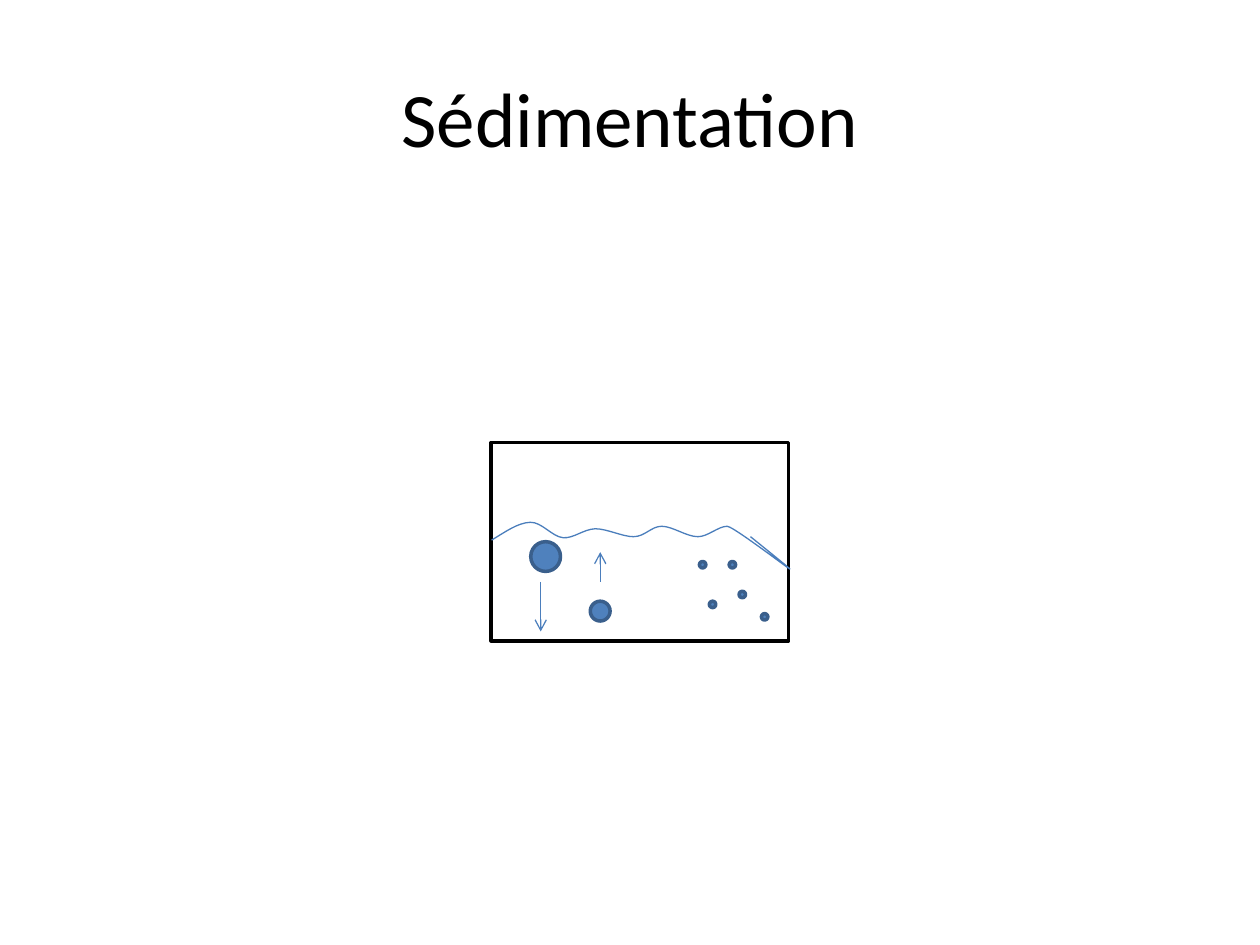
from dataclasses import dataclass

from lxml import etree
from pptx import Presentation
from pptx.dml.color import RGBColor
from pptx.enum.shapes import MSO_CONNECTOR, MSO_SHAPE
from pptx.enum.text import MSO_ANCHOR, PP_ALIGN
from pptx.oxml.ns import qn
from pptx.util import Cm, Pt

RECTANGLE = MSO_SHAPE.RECTANGLE
OVAL = MSO_SHAPE.OVAL
GRAIN = MSO_SHAPE.FLOWCHART_CONNECTOR
STRAIGHT = MSO_CONNECTOR.STRAIGHT
MIDDLE = MSO_ANCHOR.MIDDLE
CENTER = PP_ALIGN.CENTER


@dataclass(frozen=True)
class Theme:
    font: str = "Calibri"
    title_size: float = 44
    outline: float = 2
    thin: float = 0.75
    ink: RGBColor = RGBColor(0, 0, 0)
    paper: RGBColor = RGBColor(255, 255, 255)
    particle: RGBColor = RGBColor.from_string("4F81BD")
    particle_edge: RGBColor = RGBColor.from_string("3A5F8C")
    stroke: RGBColor = RGBColor.from_string("4B7EBC")


@dataclass(frozen=True)
class Particle:
    left: float
    top: float
    diameter: float = 0.13
    kind: MSO_SHAPE = GRAIN


@dataclass(frozen=True)
class Arrow:
    x: float
    start: float
    end: float


THEME = Theme()
PARTICLES = [
    Particle(10.7, 10.92, 0.6, OVAL),
    Particle(14.1, 11.32),
    Particle(14.7, 11.32),
    Particle(15.35, 12.37),
    Particle(14.3, 12.12),
    Particle(14.9, 11.92),
    Particle(11.9, 12.12, 0.4, OVAL),
]
ARROWS = [Arrow(10.9, 11.73, 12.73), Arrow(12.1, 11.73, 11.13)]
SURFACE_START = (9.91, 10.89)
SURFACE_CURVES = [
    ((10.19, 10.72), (10.44, 10.54), (10.69, 10.53)),
    ((10.92, 10.52), (11.13, 10.82), (11.35, 10.84)),
    ((11.56, 10.86), (11.76, 10.67), (12.0, 10.66)),
    ((12.24, 10.66), (12.55, 10.82), (12.77, 10.82)),
    ((13.0, 10.82), (13.13, 10.61), (13.34, 10.61)),
    ((13.56, 10.61), (13.84, 10.82), (14.07, 10.82)),
    ((14.27, 10.82), (14.48, 10.61), (14.66, 10.61)),
    ((14.83, 10.61), (17.09, 12.4), (15.13, 10.82)),
]


def add_title(page, text: str) -> None:
    box = page.shapes.add_textbox(Cm(1.27), Cm(0.76), Cm(22.86), Cm(3.18))
    frame = box.text_frame
    frame.word_wrap = True
    frame.vertical_anchor = MIDDLE
    para = frame.paragraphs[0]
    para.alignment = CENTER
    span = para.add_run()
    span.text = text
    span.font.name = THEME.font
    span.font.size = Pt(THEME.title_size)
    span.font.color.rgb = THEME.ink


def add_solid(page, kind: MSO_SHAPE, left: float, top: float, width: float,
              height: float, fill: RGBColor, edge: RGBColor) -> None:
    shape = page.shapes.add_shape(kind, Cm(left), Cm(top), Cm(width), Cm(height))
    shape.shadow.inherit = False
    shape.fill.solid()
    shape.fill.fore_color.rgb = fill
    shape.line.color.rgb = edge
    shape.line.width = Pt(THEME.outline)


def bend_segments(shape) -> None:
    segments = list(shape.element.iter(qn("a:lnTo")))
    for first in range(0, len(segments), 3):
        curve = etree.Element(qn("a:cubicBezTo"))
        segments[first].addprevious(curve)
        for segment in segments[first:first + 3]:
            curve.append(segment[0])
            segment.getparent().remove(segment)


def add_surface(page) -> None:
    x, y = SURFACE_START
    builder = page.shapes.build_freeform(Cm(x), Cm(y))
    points = [(Cm(x), Cm(y)) for curve in SURFACE_CURVES for x, y in curve]
    builder.add_line_segments(points, close=False)
    surface = builder.convert_to_shape()
    bend_segments(surface)
    surface.shadow.inherit = False
    surface.fill.background()
    surface.line.color.rgb = THEME.stroke
    surface.line.width = Pt(THEME.thin)


def add_arrow(page, arrow: Arrow) -> None:
    line = page.shapes.add_connector(
        STRAIGHT, Cm(arrow.x), Cm(arrow.start), Cm(arrow.x), Cm(arrow.end))
    line.line.color.rgb = THEME.stroke
    line.line.width = Pt(THEME.thin)
    properties = line.element.spPr
    etree.SubElement(properties.find(qn("a:ln")), qn("a:tailEnd"), type="arrow")
    etree.SubElement(properties, qn("a:effectLst"))


def main() -> None:
    deck = Presentation()
    deck.slide_width, deck.slide_height = Cm(25.4), Cm(19.05)
    page = deck.slides.add_slide(deck.slide_layouts[6])
    add_title(page, "Sédimentation")
    add_solid(page, RECTANGLE, 9.9, 8.92, 6, 4, THEME.paper, THEME.ink)
    add_surface(page)
    for particle in PARTICLES:
        add_solid(page, particle.kind, particle.left, particle.top, particle.diameter,
                  particle.diameter, THEME.particle, THEME.particle_edge)
    for arrow in ARROWS:
        add_arrow(page, arrow)
    deck.save("out.pptx")


if __name__ == "__main__":
    main()
